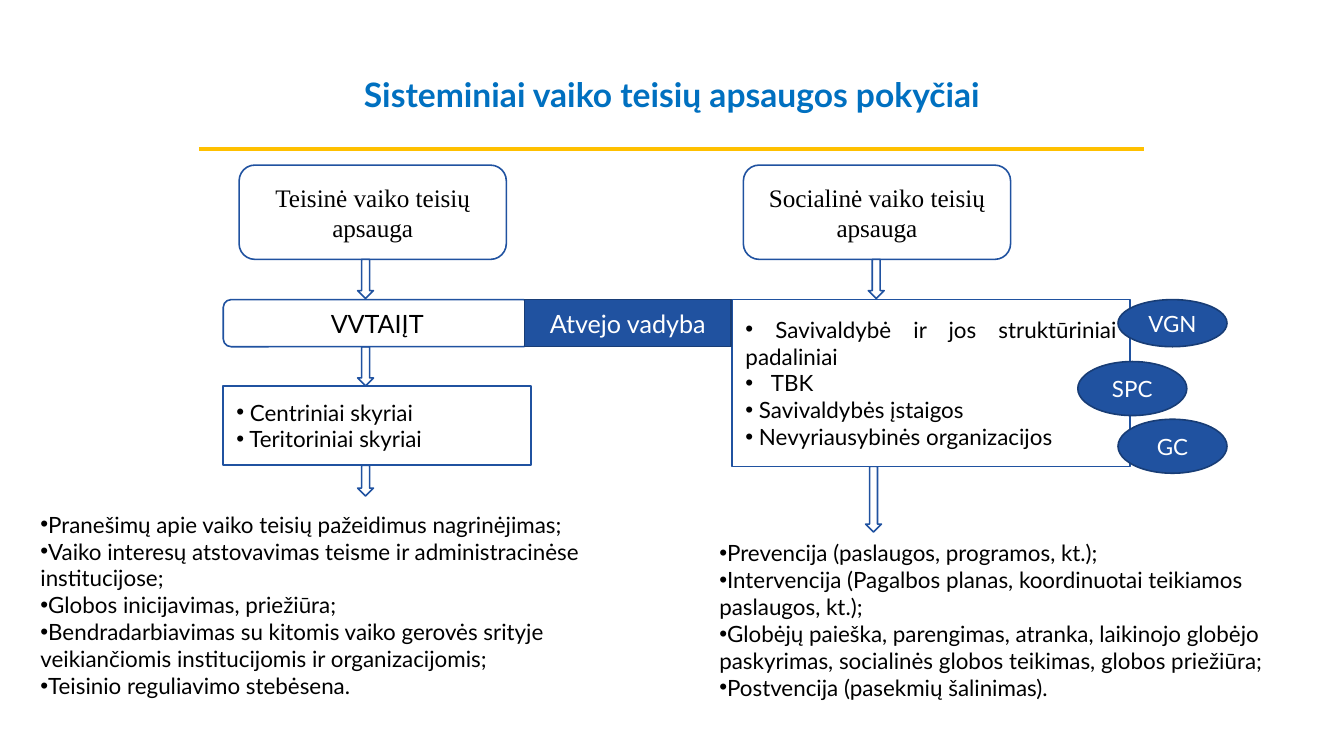
from lxml.etree import SubElement
from pptx import Presentation
from pptx.dml.color import RGBColor
from pptx.enum.shapes import MSO_CONNECTOR, MSO_SHAPE as Shape
from pptx.enum.text import MSO_ANCHOR, MSO_AUTO_SIZE, PP_ALIGN as Align
from pptx.oxml.ns import qn
from pptx.util import Cm, Pt

BLACK = RGBColor(0x00, 0x00, 0x00)
WHITE = RGBColor(0xFF, 0xFF, 0xFF)
BLUE = RGBColor(0x20, 0x52, 0xA0)
DARK_BLUE = RGBColor(0x18, 0x3D, 0x76)
TITLE_BLUE = RGBColor(0x00, 0x70, 0xC0)
GOLD = RGBColor(0xFF, 0xC0, 0x00)
SANS, SERIF = "Lato", "Times New Roman"

# Content: places are left, top, width, height in centimetres
TITLE = "Sisteminiai vaiko teisių apsaugos pokyčiai"
TITLE_PLACE = (1.27, 0.58, 22.86, 2.39)
RULE = (3.76, 2.82, 21.62, 2.82)

HEADINGS = [
    ("Teisinė vaiko teisių apsauga", 4.52),
    ("Socialinė vaiko teisių apsauga", 14.05),
]
AUTHORITY = ("VVTAIĮT", (4.22, 5.66, 5.82, 0.89))
CASE_MANAGEMENT = ("Atvejo vadyba", (9.91, 5.66, 3.91, 0.89))
UNIT_BOXES = [
    ((4.22, 7.29, 5.82, 1.5), [" Centriniai skyriai", " Teritoriniai skyriai"]),
    ((13.84, 5.66, 7.52, 3.15), [
        " Savivaldybė ir jos struktūriniai padaliniai",
        "TBK",
        " Savivaldybės įstaigos",
        " Nevyriausybinės organizacijos",
    ]),
]
HANGING_ITEM = "TBK"
ARROWS = [  # left, top, height
    (6.76, 4.9, 0.74),
    (16.41, 4.9, 0.74),
    (6.76, 6.55, 0.74),
    (6.76, 8.79, 0.58),
    (16.36, 8.81, 1.24),
]
PARTNERS = [
    ("VGN", (21.13, 5.66, 2.06, 0.89)),
    ("SPC", (20.37, 6.83, 2.06, 1.02)),
    ("GC", (21.13, 7.92, 2.06, 1.02)),
]
TASK_LISTS = [
    ((0.51, 9.52, 11.56, 3.84), [
        "Pranešimų apie vaiko teisių pažeidimus nagrinėjimas;",
        "Vaiko interesų atstovavimas teisme ir administracinėse institucijose;",
        "Globos inicijavimas, priežiūra;",
        "Bendradarbiavimas su kitomis vaiko gerovės srityje "
        "veikiančiomis institucijomis ir organizacijomis;",
        "Teisinio reguliavimo stebėsena.",
    ]),
    ((13.34, 10.06, 12.17, 3.33), [
        "Prevencija (paslaugos, programos, kt.);",
        "Intervencija (Pagalbos planas, koordinuotai teikiamos paslaugos, kt.);",
        "Globėjų paieška, parengimas, atranka, laikinojo globėjo paskyrimas, "
        "socialinės globos teikimas, globos priežiūra;",
        "Postvencija (pasekmių šalinimas).",
    ]),
]


def move(shape, place):
    shape.left, shape.top, shape.width, shape.height = map(Cm, place)


def format_runs(paragraph, size, color=BLACK, font=SANS, bold=False):
    for run in paragraph.runs:
        run.font.size, run.font.name, run.font.bold = Pt(size), font, bold
        run.font.color.rgb = color


def add_box(kind, place, fill=WHITE, line=BLUE):
    shape = slide.shapes.add_shape(kind, *map(Cm, place))
    shape.shadow.inherit = False
    shape.fill.solid()
    shape.fill.fore_color.rgb = fill
    shape.line.color.rgb = line
    shape.line.width = Pt(0.85)
    shape.text_frame.vertical_anchor = MSO_ANCHOR.MIDDLE
    return shape


def add_label(kind, text, place, size=13.5, fill=WHITE, line=BLUE, color=BLACK, font=SANS):
    shape = add_box(kind, place, fill, line)
    shape.text_frame.text = text
    paragraph = shape.text_frame.paragraphs[0]
    paragraph.alignment = Align.CENTER
    format_runs(paragraph, size, color, font)
    return shape


def fill_list(text_frame, items, alignment):
    text_frame.text = "\n".join(items)
    for paragraph, item in zip(text_frame.paragraphs, items):
        indent = Cm(0.48) if item == HANGING_ITEM else 0
        properties = paragraph._p.get_or_add_pPr()
        properties.set("marL", str(indent))
        properties.set("indent", str(-indent))
        SubElement(properties, qn("a:buFont"), typeface="Arial")
        SubElement(properties, qn("a:buChar"), char="•")
        paragraph.alignment = alignment
        paragraph.space_before = Pt(0)
        format_runs(paragraph, 12)


presentation = Presentation()
presentation.slide_width, presentation.slide_height = Cm(25.4), Cm(14.28)
slide = presentation.slides.add_slide(presentation.slide_layouts[3])
title, *bodies = slide.placeholders

# Title and rule
move(title, TITLE_PLACE)
title.text_frame.text = TITLE
title.text_frame.vertical_anchor = MSO_ANCHOR.MIDDLE
title.text_frame.paragraphs[0].alignment = Align.CENTER
format_runs(title.text_frame.paragraphs[0], 18, TITLE_BLUE, bold=True)

rule = slide.shapes.add_connector(MSO_CONNECTOR.STRAIGHT, *map(Cm, RULE))
rule.line.color.rgb = GOLD
rule.line.width = Pt(2)
SubElement(rule._element.spPr, qn("a:effectLst"))

# Task lists at the bottom
for body, (place, items) in zip(bodies, TASK_LISTS):
    move(body, place)
    fill_list(body.text_frame, items, Align.LEFT)
    body.text_frame.auto_size = MSO_AUTO_SIZE.SHAPE_TO_FIT_TEXT

# Two branches of the scheme
for text, left in HEADINGS:
    add_label(Shape.ROUNDED_RECTANGLE, text, (left, 3.12, 5.05, 1.78), font=SERIF)
for left, top, height in ARROWS:
    add_box(Shape.DOWN_ARROW, (left, top, 0.3, height))
add_label(Shape.ROUNDED_RECTANGLE, *AUTHORITY)
for place, items in UNIT_BOXES:
    fill_list(add_box(Shape.RECTANGLE, place).text_frame, items, Align.JUSTIFY)

# Link between the branches and the partners
add_label(Shape.RECTANGLE, *CASE_MANAGEMENT, fill=BLUE, line=DARK_BLUE, color=WHITE)
for text, place in PARTNERS:
    add_label(Shape.OVAL, text, place, size=12, fill=BLUE, line=DARK_BLUE, color=WHITE)

presentation.save("out.pptx")
